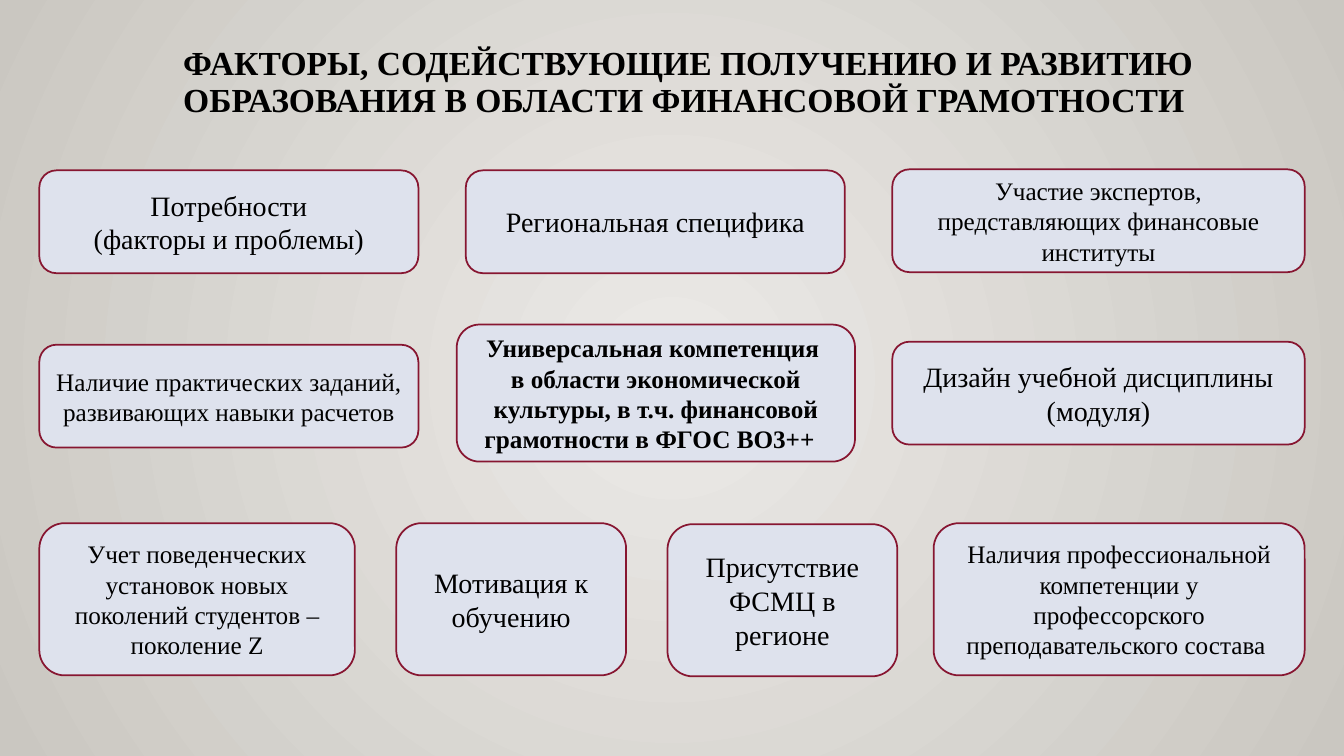
from lxml import etree
from pptx import Presentation
from pptx.dml.color import RGBColor
from pptx.enum.shapes import MSO_SHAPE
from pptx.enum.text import MSO_ANCHOR, PP_ALIGN
from pptx.oxml.ns import qn
from pptx.util import Inches, Pt

ROUNDED = MSO_SHAPE.ROUNDED_RECTANGLE
MIDDLE = MSO_ANCHOR.MIDDLE
CENTER = PP_ALIGN.CENTER
FONT = "Times New Roman"
COLORS = {
    "center": "ECEAE7",
    "edge": "CAC7C1",
    "card": "DEE2ED",
    "border": "871631",
    "text": "000000",
}

TITLE = ("ФАКТОРЫ, СОДЕЙСТВУЮЩИЕ ПОЛУЧЕНИЮ И РАЗВИТИЮ "
         "ОБРАЗОВАНИЯ В ОБЛАСТИ ФИНАНСОВОЙ ГРАМОТНОСТИ ")
CORE = ("Универсальная компетенция \nв области экономической культуры, "
        "в т.ч. финансовой грамотности в ФГОС ВО3++  ")
LEFT, RIGHT = 0.39, 8.85
SIDE_WIDTH, RIGHT_WIDTH, SMALL_WIDTH = 3.76, 4.09, 2.28
LOW, TALL = 1.02, 1.51
FACTORS = [
    (LEFT, 1.69, SIDE_WIDTH, LOW, 20, "Потребности\n(факторы и проблемы)"),
    (4.62, 1.69, SIDE_WIDTH, LOW, 20, "Региональная специфика"),
    (RIGHT, 1.68, RIGHT_WIDTH, LOW, 18,
     "Участие экспертов, представляющих финансовые институты"),
    (LEFT, 3.42, SIDE_WIDTH, LOW, 18,
     "Наличие практических заданий, развивающих навыки расчетов"),
    (RIGHT, 3.39, RIGHT_WIDTH, LOW, 20, "Дизайн учебной дисциплины (модуля)"),
    (LEFT, 5.19, 3.13, TALL, 18,
     "Учет поведенческих установок новых поколений студентов – поколение Z"),
    (3.93, 5.19, SMALL_WIDTH, TALL, 20, "Мотивация к обучению"),
    (6.62, 5.2, SMALL_WIDTH, TALL, 20, "Присутствие ФСМЦ в регионе"),
    (9.26, 5.19, 3.68, TALL, 18,
     "Наличия профессиональной компетенции у профессорского "
     "преподавательского состава "),
]


def color(name):
    """Return the palette colour with this name."""
    return RGBColor.from_string(COLORS[name])


def write_text(box, text, size, bold=False, line_spacing=None):
    """Fill a box with centred paragraphs, one for each line of text."""
    frame = box.text_frame
    frame.word_wrap = True
    frame.vertical_anchor = MIDDLE
    for index, line in enumerate(text.split("\n")):
        para = frame.add_paragraph() if index else frame.paragraphs[0]
        para.alignment = CENTER
        para.line_spacing = line_spacing
        span = para.add_run()
        span.text = line
        span.font.name = FONT
        span.font.size = Pt(size)
        span.font.bold = bold
        span.font.color.rgb = color("text")


def add_card(page, left, top, width, height, size, text, bold=False):
    """Add a rounded card that names one factor."""
    card = page.shapes.add_shape(
        ROUNDED, Inches(left), Inches(top), Inches(width), Inches(height))
    card.shadow.inherit = False
    card.fill.solid()
    card.fill.fore_color.rgb = color("card")
    card.line.color.rgb = color("border")
    card.line.width = Pt(1.25)
    write_text(card, text, size, bold)


def add_title(page):
    """Add the slide heading."""
    box = page.shapes.add_textbox(
        Inches(0.94), Inches(0.38), Inches(11.77), Inches(0.89))
    write_text(box, TITLE, 24, bold=True, line_spacing=0.9)


def paint_background(page):
    """Give the page a circular gradient that darkens outwards."""
    fill = page.background.fill
    fill.gradient()
    for stop, name, position in zip(fill.gradient_stops, ("center", "edge"), (0, 1)):
        stop.color.rgb = color(name)
        stop.position = position
    gradient = page.element.find(".//" + qn("a:gradFill"))
    linear = gradient.find(qn("a:lin"))
    circle = etree.Element(qn("a:path"), {"path": "circle"})
    sides = {side: "50000" for side in "ltrb"}
    etree.SubElement(circle, qn("a:fillToRect"), sides)
    gradient.replace(linear, circle)


def main():
    """Build and save the deck."""
    deck = Presentation()
    deck.slide_width, deck.slide_height = Inches(13.33), Inches(7.5)
    page = deck.slides.add_slide(deck.slide_layouts[6])
    paint_background(page)
    add_title(page)
    for factor in FACTORS:
        add_card(page, *factor)
    add_card(page, 4.53, 3.22, 3.95, 1.36, 18, CORE, bold=True)
    deck.save("out.pptx")


if __name__ == "__main__":
    main()
